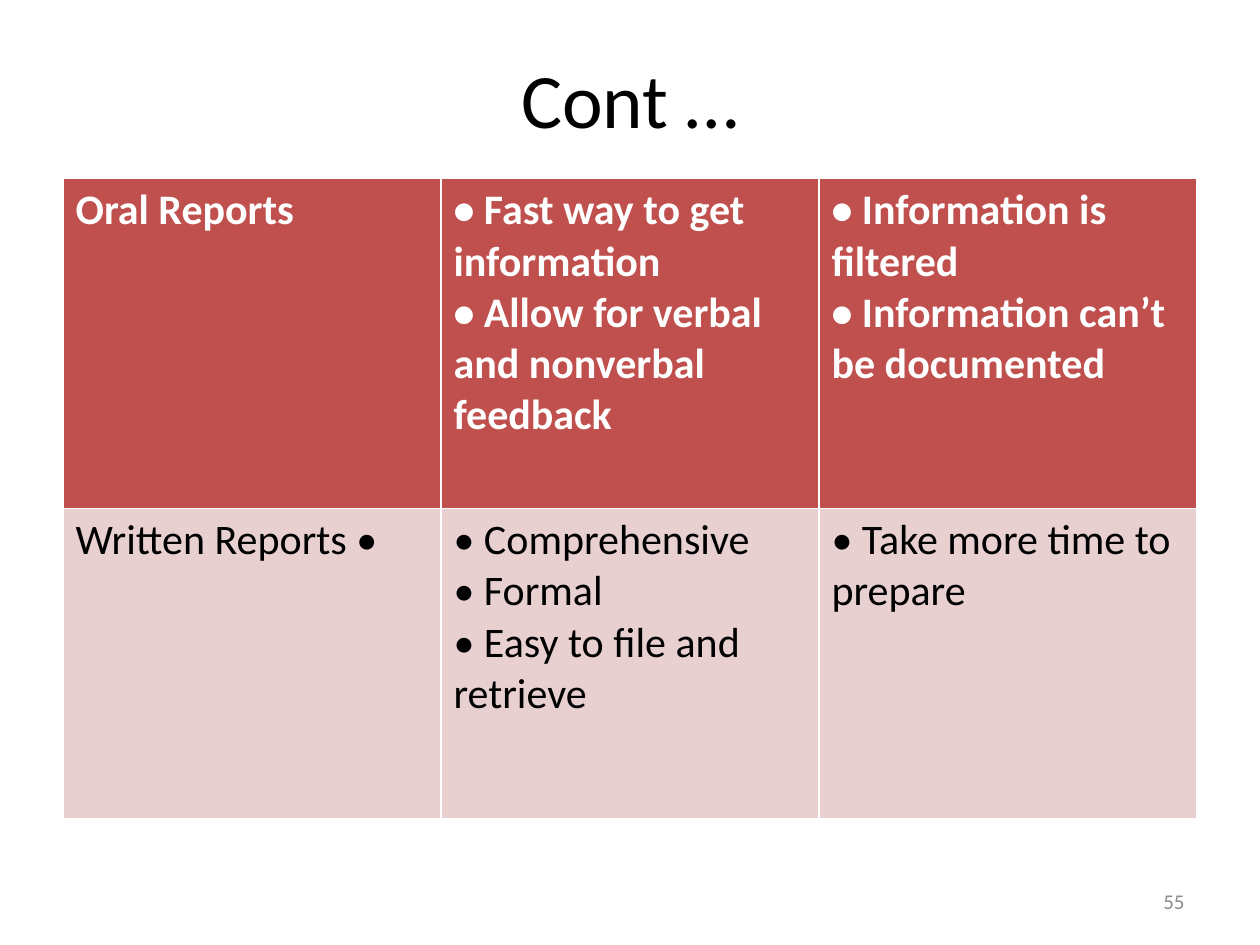
from dataclasses import dataclass

from pptx import Presentation
from pptx.dml.color import RGBColor
from pptx.enum.text import MSO_ANCHOR, PP_ALIGN
from pptx.util import Cm, Pt


@dataclass(frozen=True)
class Theme:
    font: str = "Calibri"
    title_size: int = 44
    body_size: int = 24
    number_size: int = 12
    ink: str = "000000"
    header_ink: str = "FFFFFF"
    header_fill: str = "C0504D"
    body_fill: str = "E8D0D0"
    muted: str = "8C8C8C"


def write(frame, lines, *, font, size, color, bold=False,
          align=PP_ALIGN.LEFT, anchor=MSO_ANCHOR.TOP):
    """Fill a text frame with one paragraph per line."""
    frame.word_wrap = True
    frame.vertical_anchor = anchor
    frame.text = "\n".join(lines)
    for paragraph in frame.paragraphs:
        paragraph.alignment = align
        for run in paragraph.runs:
            run.font.name = font
            run.font.size = Pt(size)
            run.font.bold = bold
            run.font.color.rgb = RGBColor.from_string(color)


def place(shape, left, top, width, height):
    shape.left, shape.top = Cm(left), Cm(top)
    shape.width, shape.height = Cm(width), Cm(height)


class SlideBuilder:
    def __init__(self, slide, theme):
        self.slide = slide
        self.theme = theme

    def title(self, text, box):
        heading = self.slide.shapes.title
        place(heading, *box)
        write(heading.text_frame, [text], font=self.theme.font,
              size=self.theme.title_size, color=self.theme.ink,
              align=PP_ALIGN.CENTER, anchor=MSO_ANCHOR.MIDDLE)

    def table(self, rows, row_heights, left, top, width):
        """Draw rows of cells, each a list of lines; the first row is the header."""
        theme = self.theme
        grid = self.slide.shapes.add_table(
            len(rows), len(rows[0]), Cm(left), Cm(top),
            Cm(width), Cm(sum(row_heights))).table
        grid.horz_banding = False
        for row_index, (row, height) in enumerate(zip(rows, row_heights)):
            header = row_index == 0
            grid.rows[row_index].height = Cm(height)
            for column_index, lines in enumerate(row):
                cell = grid.cell(row_index, column_index)
                cell.fill.solid()
                cell.fill.fore_color.rgb = RGBColor.from_string(
                    theme.header_fill if header else theme.body_fill)
                write(cell.text_frame, lines, font=theme.font,
                      size=theme.body_size, bold=header,
                      color=theme.header_ink if header else theme.ink)

    def page_number(self, number, box):
        footer = self.slide.shapes.add_textbox(*map(Cm, box))
        write(footer.text_frame, [str(number)], font=self.theme.font,
              size=self.theme.number_size, color=self.theme.muted,
              align=PP_ALIGN.RIGHT, anchor=MSO_ANCHOR.MIDDLE)


REPORTS = [
    [
        ["Oral Reports"],
        ["• Fast way to get information",
         "• Allow for verbal and nonverbal feedback"],
        ["• Information is filtered", "• Information can’t be documented"],
    ],
    [
        ["Written Reports •"],
        ["• Comprehensive", "• Formal", "• Easy to file and retrieve"],
        ["• Take more time to prepare"],
    ],
]


def main():
    deck = Presentation()
    deck.slide_width, deck.slide_height = Cm(25.4), Cm(19.05)
    title_only = deck.slide_layouts.get_by_name("Title Only")
    builder = SlideBuilder(deck.slides.add_slide(title_only), Theme())

    margin = 1.27
    content_width = 25.4 - 2 * margin
    number_width = 5.93
    builder.title("Cont …", (margin, 0.76, content_width, 2.41))
    builder.table(REPORTS, (6.65, 6.26), margin, 3.6, content_width)
    builder.page_number(
        55, (25.4 - margin - number_width, 17.66, number_width, 1.01))
    deck.save("out.pptx")


if __name__ == "__main__":
    main()
